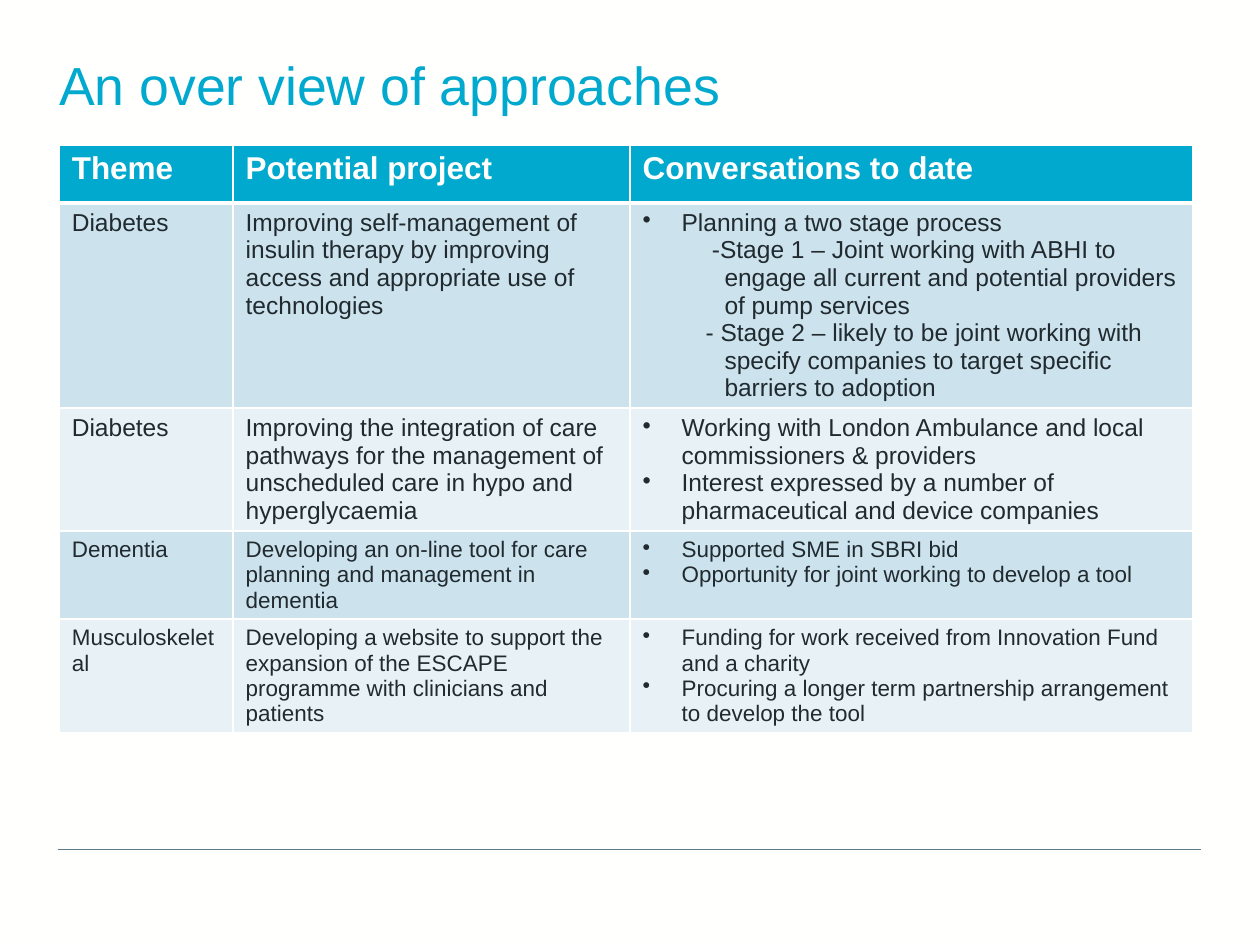
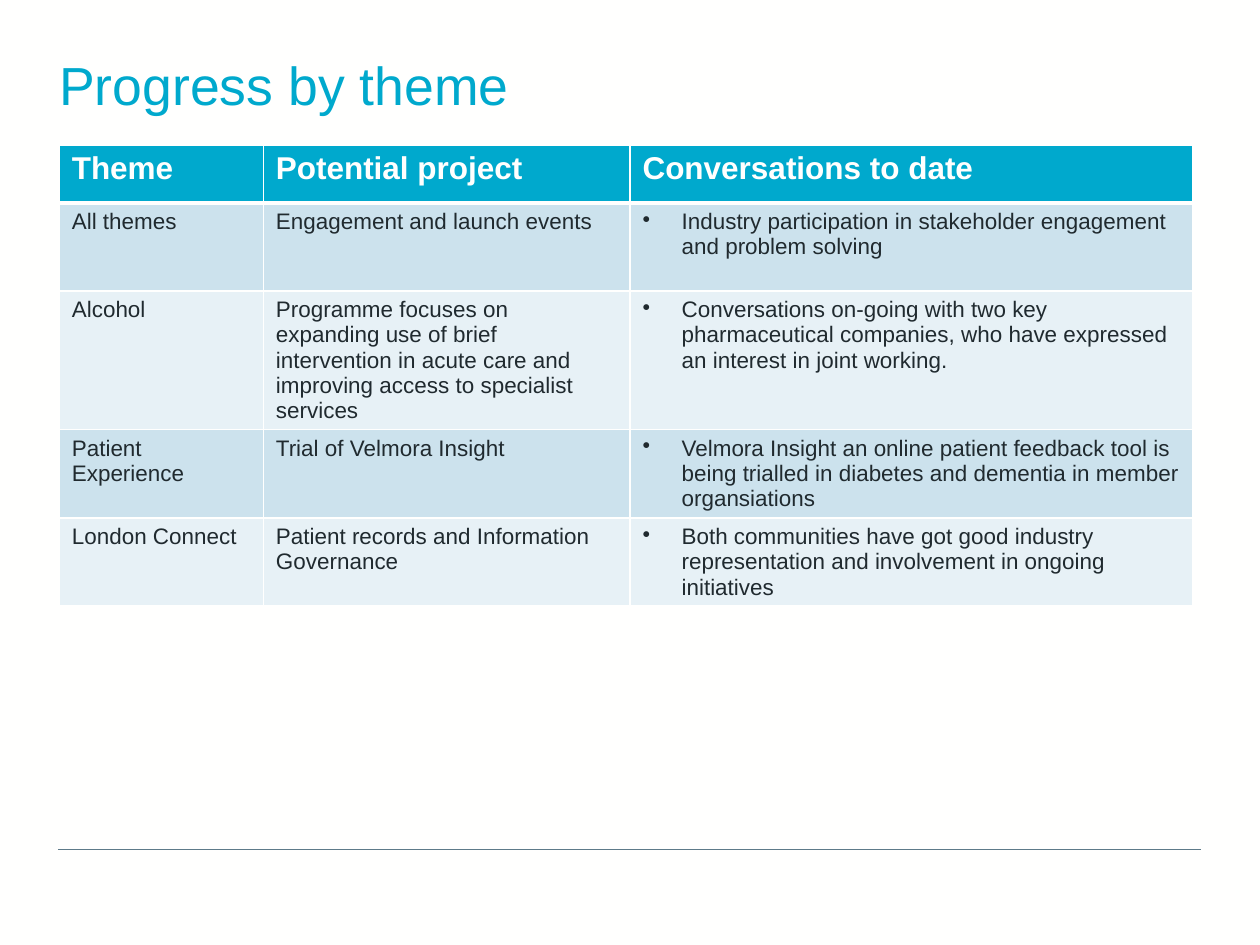
from lxml import etree
from pptx import Presentation
from pptx.dml.color import RGBColor
from pptx.enum.shapes import MSO_CONNECTOR
from pptx.enum.text import MSO_ANCHOR, PP_ALIGN
from pptx.oxml.ns import qn
from pptx.util import Inches, Pt

STRAIGHT = MSO_CONNECTOR.STRAIGHT
TOP = MSO_ANCHOR.TOP
LEFT = PP_ALIGN.LEFT

CYAN = RGBColor(0x00, 0xA9, 0xCD)
WHITE = RGBColor(0xFF, 0xFF, 0xFE)
INK = RGBColor(0x20, 0x2A, 0x2F)
RULE_GREY = RGBColor(0x5D, 0x7A, 0x89)
BANDS = (RGBColor(0xCC, 0xE2, 0xED), RGBColor(0xE7, 0xF1, 0xF6))

FONT = "Arial"
MARGIN = 0.47
TABLE_TOP = 1.15
HEADER_HEIGHT = 0.46
HEADINGS = ("Theme", "Potential project", "Conversations to date")

# Paragraph layouts: left margin and first-line indent in inches, bullet
BULLET = {"margin": 0.31, "indent": -0.31, "bullet": "•"}
STAGE_1 = {"margin": 0.65, "indent": -0.1}
STAGE_2 = {"margin": 0.65, "indent": -0.15}

# Each row: height, text size, theme, project, [(conversation, paragraph layout)]
SLIDES = [
    {
        "title": "An over view of approaches",
        "columns": (1.38, 3.15, 4.47),
        "rows": [
            (1.63, 14, "Diabetes",
             "Improving self-management of insulin therapy by improving access "
             "and appropriate use of technologies",
             [("Planning a two stage process", BULLET),
              ("-Stage 1 – Joint working with ABHI to engage all current and "
               "potential providers of pump services", STAGE_1),
              ("- Stage 2 – likely to be joint working with specify companies "
               "to target specific barriers to adoption", STAGE_2)]),
            (0.97, 14, "Diabetes",
             "Improving the integration of care pathways for the management of "
             "unscheduled care in hypo and hyperglycaemia",
             [("Working with London Ambulance and local commissioners & providers", BULLET),
              ("Interest expressed by a number of pharmaceutical and device "
               "companies", BULLET)]),
            (0.7, 12.8, "Dementia",
             "Developing an on-line tool for care planning and management in dementia",
             [("Supported SME in SBRI bid", BULLET),
              ("Opportunity for joint working to develop a tool", BULLET)]),
            (0.9, 12.8, "Musculoskeletal",
             "Developing a website to support the expansion of the ESCAPE "
             "programme with clinicians and patients",
             [("Funding for work received from Innovation Fund and a charity", BULLET),
              ("Procuring a longer term partnership arrangement to develop the "
               "tool", BULLET)]),
        ],
    },
    {
        "title": "Progress by theme",
        "columns": (1.62, 2.91, 4.47),
        "rows": [
            (0.7, 12.8, "All themes", "Engagement and launch events",
             [("Industry participation in stakeholder engagement and problem "
               "solving", BULLET)]),
            (1.1, 12.8, "Alcohol",
             "Programme focuses on expanding use of brief intervention in acute "
             "care and improving access to specialist services",
             [("Conversations on-going with two key pharmaceutical companies, "
               "who have expressed an interest in joint working.", BULLET)]),
            (0.7, 12.8, "Patient Experience", "Trial of Velmora Insight",
             [("Velmora Insight an online patient feedback tool is being trialled "
               "in diabetes and dementia in member organsiations", BULLET)]),
            (0.7, 12.8, "London Connect", "Patient records and Information Governance",
             [("Both communities have got good industry representation and "
               "involvement in ongoing initiatives", BULLET)]),
        ],
    },
]


def write(paragraph, text, size, color=INK, bold=False, margin=0, indent=0,
          bullet=None, line_spacing=None):
    properties = paragraph._p.get_or_add_pPr()
    properties.set("marL", str(Inches(margin)))
    properties.set("indent", str(Inches(indent)))
    if bullet:
        etree.SubElement(properties, qn("a:buChar"), char=bullet)
    paragraph.alignment = LEFT
    if line_spacing:
        paragraph.line_spacing = line_spacing
    run = paragraph.add_run()
    run.text = text
    run.font.name = FONT
    run.font.size = Pt(size)
    run.font.bold = bold
    run.font.color.rgb = color


def format_cell(cell, fill, top=1, bottom=1):
    """Fill the cell and give it white borders; top and bottom are widths in points."""
    properties = cell._tc.get_or_add_tcPr()
    for side, width in (("L", 1), ("R", 1), ("T", top), ("B", bottom)):
        border = etree.SubElement(properties, qn(f"a:ln{side}"), w=str(Pt(width)))
        solid = etree.SubElement(border, qn("a:solidFill"))
        etree.SubElement(solid, qn("a:srgbClr"), val=str(WHITE))
    cell.fill.solid()
    cell.fill.fore_color.rgb = fill


def add_title(slide, text):
    title = slide.shapes.title
    title.left, title.top = Inches(MARGIN), Inches(0.32)
    title.width, title.height = Inches(9), Inches(0.6)
    frame = title.text_frame
    frame.margin_left = 0
    frame.vertical_anchor = TOP
    frame.word_wrap = True
    write(frame.paragraphs[0], text, 30.6, CYAN, line_spacing=Pt(40))


def add_footer_rule(slide):
    rule = slide.shapes.add_connector(
        STRAIGHT, Inches(0.46), Inches(6.74), Inches(9.53), Inches(6.74))
    rule.line.color.rgb = RULE_GREY
    rule.line.width = Pt(0.5)
    etree.SubElement(rule._element.spPr, qn("a:effectLst"))


def add_theme_table(slide, columns, rows):
    heights = [HEADER_HEIGHT] + [row[0] for row in rows]
    table = slide.shapes.add_table(
        len(heights), len(columns), Inches(MARGIN), Inches(TABLE_TOP),
        Inches(sum(columns)), Inches(sum(heights))).table
    table.horz_banding = False
    for column, width in zip(table.columns, columns):
        column.width = Inches(width)
    for table_row, height in zip(table.rows, heights):
        table_row.height = Inches(height)

    for cell, heading in zip(table.rows[0].cells, HEADINGS):
        format_cell(cell, CYAN, bottom=3)
        write(cell.text_frame.paragraphs[0], heading, 18, WHITE, bold=True)

    for index, (_, size, theme, project, conversations) in enumerate(rows):
        contents = ([(theme, {})], [(project, {})], conversations)
        for cell, lines in zip(table.rows[index + 1].cells, contents):
            format_cell(cell, BANDS[index % 2], top=1 if index else 3)
            frame = cell.text_frame
            for number, (text, layout) in enumerate(lines):
                paragraph = frame.add_paragraph() if number else frame.paragraphs[0]
                write(paragraph, text, size, **layout)


def main():
    presentation = Presentation()
    presentation.slide_width, presentation.slide_height = Inches(10), Inches(7.5)
    background = presentation.slide_master.background.fill
    background.solid()
    background.fore_color.rgb = WHITE
    title_only = presentation.slide_layouts[5]
    for content in SLIDES:
        slide = presentation.slides.add_slide(title_only)
        add_footer_rule(slide)
        add_title(slide, content["title"])
        add_theme_table(slide, content["columns"], content["rows"])
    presentation.save("out.pptx")


if __name__ == "__main__":
    main()
